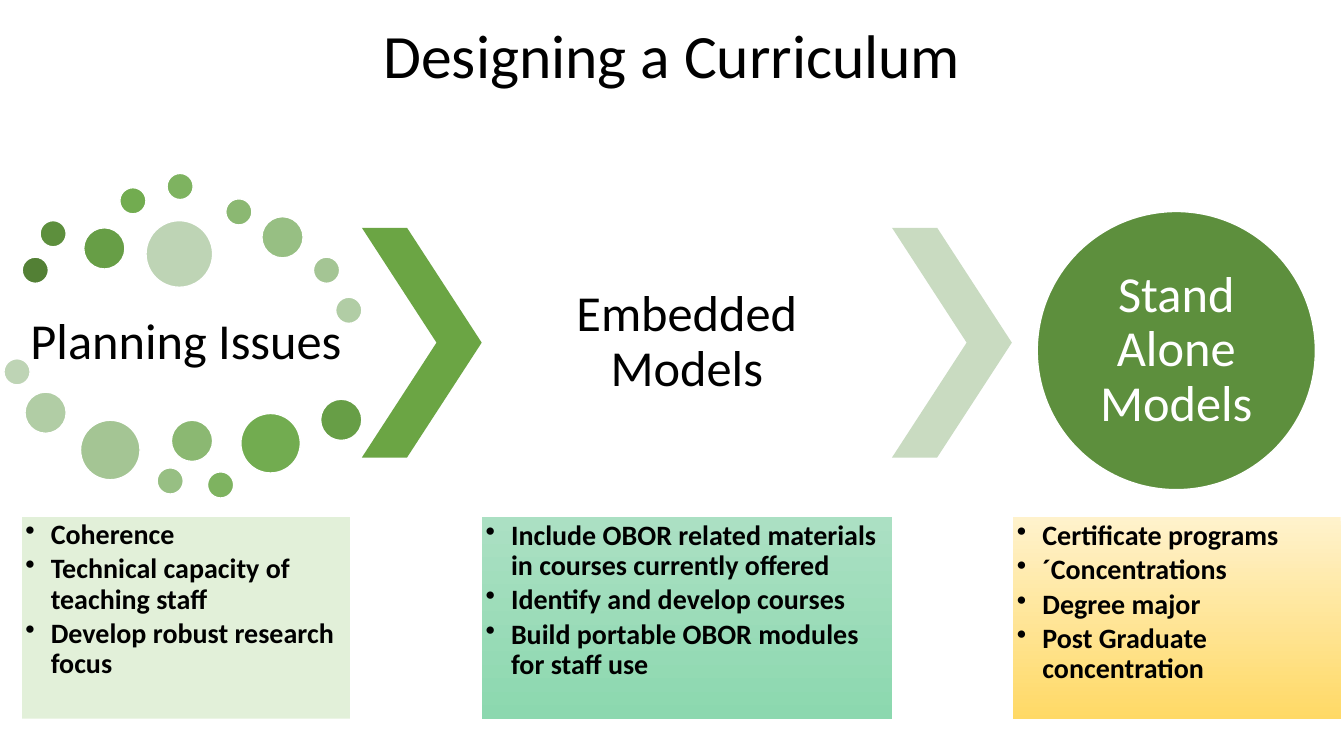
from lxml import etree
from pptx import Presentation
from pptx.dml.color import RGBColor
from pptx.enum.shapes import MSO_SHAPE
from pptx.enum.text import MSO_ANCHOR, PP_ALIGN
from pptx.oxml.ns import qn
from pptx.util import Cm, Pt

OVAL, RECT, CHEVRON = MSO_SHAPE.OVAL, MSO_SHAPE.RECTANGLE, MSO_SHAPE.CHEVRON
TOP, MIDDLE = MSO_ANCHOR.TOP, MSO_ANCHOR.MIDDLE
CENTER, LEFT = PP_ALIGN.CENTER, PP_ALIGN.LEFT

COLORS = {
    "text": "000000", "white": "FFFFFF", "circle": "5D8F3D",
    "arrow": "6BA544", "pale_arrow": "C9DBC1", "planning": "E2F0D9",
    "embedded_top": "ABE0C3", "embedded_end": "8CD8AF",
    "alone_top": "FFF2CC", "alone_end": "FFD966",
}
DOT_SHADES = ["538035", "5D8F3D", "679E46", "72AC50", "7EB360",
              "8BB872", "97BF83", "A4C594", "B1CDA5", "BED4B5"]
SMALL, MEDIUM, LARGE, HUGE = 0.66, 1.04, 1.5, 1.68
UPPER_DOTS = [
    (0.46, 2.11, SMALL), (0.91, 1.19, SMALL), (2.01, 1.37, MEDIUM),
    (2.92, 0.36, SMALL), (4.11, 0, SMALL), (5.59, 0.64, SMALL),
    (6.5, 1.09, MEDIUM), (7.8, 2.11, SMALL), (8.36, 3.12, SMALL),
    (3.58, 1.19, HUGE),
]
LOWER_DOTS = [
    (0, 4.67, SMALL), (0.53, 5.51, MEDIUM), (1.93, 6.22, LARGE),
    (3.86, 7.42, SMALL), (4.22, 6.22, MEDIUM), (5.13, 7.52, SMALL),
    (5.97, 6.05, LARGE), (7.98, 5.69, MEDIUM),
]
LISTS = [
    (0.56, 8.26, 0.08, ["planning"],
     ["Coherence", "Technical capacity of teaching staff",
      "Develop robust research focus"]),
    (12.14, 10.34, 0.1, ["embedded_top", "embedded_end"],
     ["Include OBOR related materials in courses currently offered",
      "Identify and develop courses",
      "Build portable OBOR modules for staff use"]),
    (25.53, 8.26, 0.1, ["alone_top", "alone_end"],
     ["Certificate programs", "´Concentrations", "Degree major",
      "Post Graduate concentration"]),
]
LIST_TOP, LIST_HEIGHT = 13.03, 5.08


def rgb(value):
    """Return the colour for a palette name or a hex string."""
    return RGBColor.from_string(COLORS.get(value, value))


def add_shape(s, kind, box, fills, line=None):
    """Add a preset shape with a solid or two-stop gradient fill."""
    sp = s.shapes.add_shape(kind, *map(Cm, box))
    sp.shadow.inherit = False
    if len(fills) == 1:
        sp.fill.solid()
        sp.fill.fore_color.rgb = rgb(fills[0])
    else:
        sp.fill.gradient()
        sp.fill.gradient_angle = 270
        for stop, color in zip(sp.fill.gradient_stops, fills):
            stop.color.rgb = rgb(color)
    if line:
        sp.line.color.rgb = rgb(line)
        sp.line.width = Pt(1)
    else:
        sp.line.fill.background()
    return sp


def add_bullet(p):
    """Give a paragraph a hanging round bullet."""
    pPr = p._p.get_or_add_pPr()
    pPr.set("marL", str(Cm(0.64)))
    pPr.set("indent", str(-Cm(0.64)))
    etree.SubElement(pPr, qn("a:buChar")).set("char", "•")


def write(sp, lines, size, color="text", margin=0.13, bulleted=False, after=0):
    """Write formatted paragraphs into a shape."""
    tf = sp.text_frame
    frame = {"word_wrap": True, "vertical_anchor": TOP if bulleted else MIDDLE}
    for side in ("left", "right", "top", "bottom"):
        frame[f"margin_{side}"] = Cm(margin)
    for name, value in frame.items():
        setattr(tf, name, value)
    para = {"alignment": LEFT if bulleted else CENTER,
            "line_spacing": 0.9, "space_after": Pt(after)}
    font = {"name": "Calibri", "size": Pt(size), "bold": bulleted}
    for i, line in enumerate(lines):
        p = tf.add_paragraph() if i else tf.paragraphs[0]
        for name, value in para.items():
            setattr(p, name, value)
        if bulleted:
            add_bullet(p)
        r = p.add_run()
        r.text = line
        for name, value in font.items():
            setattr(r.font, name, value)
        r.font.color.rgb = rgb(color)


def add_label(s, box, text, size):
    """Add a centred text box."""
    write(s.shapes.add_textbox(*map(Cm, box)), [text], size)


def add_dots(s, left, top):
    """Scatter the shaded dots above and below the planning label."""
    shades = DOT_SHADES + DOT_SHADES[:1:-1]
    for (x, y, size), shade in zip(UPPER_DOTS + LOWER_DOTS, shades):
        add_shape(s, OVAL, (left + x, top + y, size, size), [shade], "white")


def add_chevron(s, left, color):
    """Add a chevron between two stages."""
    sp = add_shape(s, CHEVRON, (left, 5.74, 3.02, 5.79), [color])
    sp.adjustments[0] = 0.623


def add_stages(s):
    """Build the row of three stages joined by chevrons."""
    add_dots(s, 0.1, 4.37)
    add_label(s, (0.56, 7.29, 8.26, 2.72), "Planning Issues", 36)
    add_chevron(s, 9.12, "arrow")
    add_label(s, (13.18, 5.74, 8.26, 5.79), "Embedded Models", 36)
    add_chevron(s, 22.48, "pale_arrow")
    circle = add_shape(s, OVAL, (26.14, 5.33, 7.01, 7.01), ["circle"], "white")
    write(circle, ["Stand Alone Models"], 36, "white", 0)


def add_lists(s):
    """Build the bulleted panels below the stages."""
    for left, width, margin, fills, lines in LISTS:
        sp = add_shape(s, RECT, (left, LIST_TOP, width, LIST_HEIGHT), fills)
        write(sp, lines, 20, margin=margin, bulleted=True, after=3)


def main():
    """Build and save the slide."""
    prs = Presentation()
    prs.slide_width, prs.slide_height = Cm(33.87), Cm(19.05)
    s = prs.slides.add_slide(prs.slide_layouts[6])
    add_label(s, (2.34, 0, 29.21, 2.97), "Designing a Curriculum", 44)
    add_stages(s)
    add_lists(s)
    prs.save("out.pptx")


if __name__ == "__main__":
    main()
